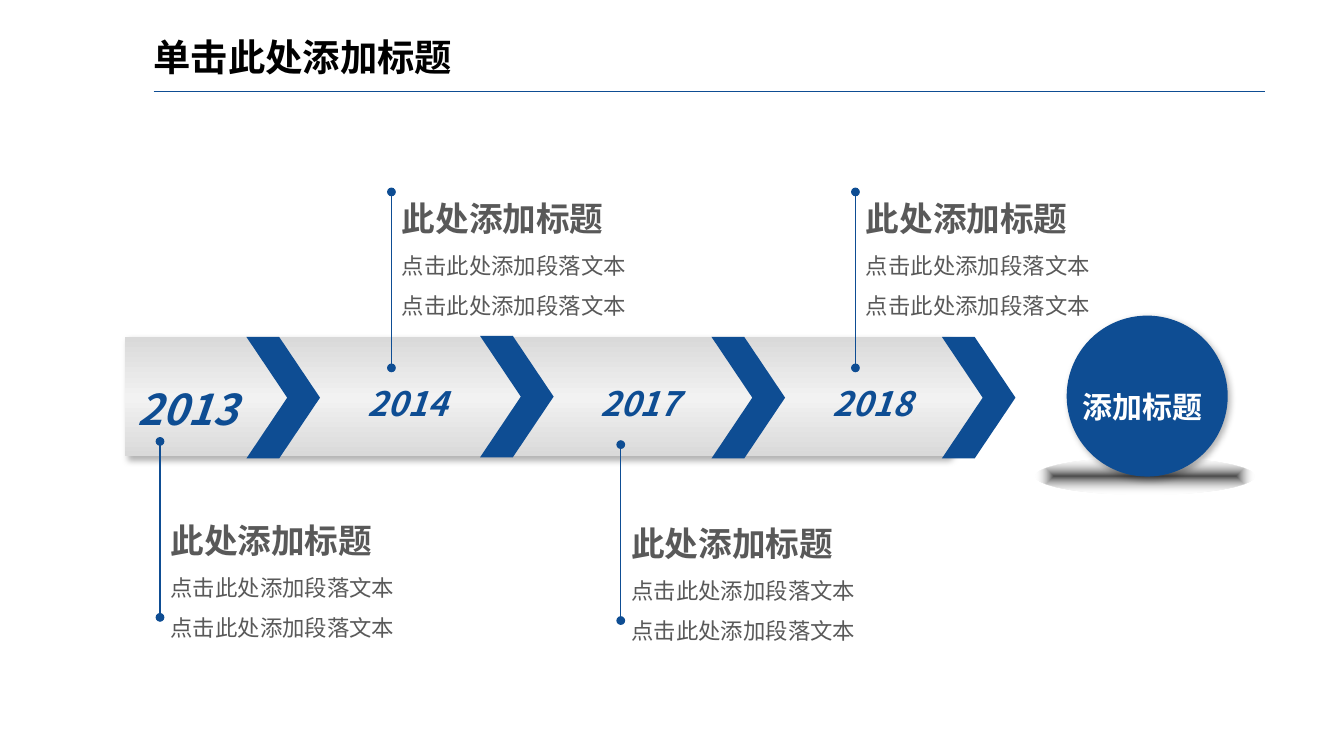
"""Build a four-year timeline slide with callouts and a closing circle."""
import dataclasses

import lxml.etree
import pptx
import pptx.dml.color
import pptx.enum.shapes
import pptx.enum.text
import pptx.oxml
import pptx.oxml.ns
import pptx.util

EMU_PER_PX = 9144
SHAPES = pptx.enum.shapes.MSO_SHAPE


@dataclasses.dataclass(frozen=True)
class Theme:
    font: str = "Noto Sans CJK SC"
    blue: str = "0E4D93"
    grey: str = "595959"
    black: str = "000000"
    white: str = "FFFFFF"
    band_edge: str = "D9D9D9"
    band_middle: str = "F2F2F2"
    title_size: float = 25.2
    first_year_size: float = 28.6
    heading_size: float = 22.7
    badge_size: float = 20.2
    body_size: float = 15.1
    line_width: float = 0.75


@dataclasses.dataclass(frozen=True)
class Milestone:
    year: str
    year_box: tuple
    year_size: float
    chevron_at: tuple
    stem_at: tuple
    callout_shift: int
    callout_width: int


THEME = Theme()
CALLOUT = ["此处添加标题", "点击此处添加段落文本", "点击此处添加段落文本"]
ABOVE, BELOW = -18, 50
STEM_LENGTH = 165
MILESTONES = [
    Milestone("2013", (119, 354, 119, 58), THEME.first_year_size, (231, 316), (150, 414), BELOW, 333),
    Milestone("2014", (335, 354, 99, 48), THEME.heading_size, (450, 315), (367, 180), ABOVE, 315),
    Milestone("2017", (553, 354, 99, 48), THEME.heading_size, (667, 316), (582, 417), BELOW, 291),
    Milestone("2018", (771, 354, 99, 48), THEME.heading_size, (883, 316), (802, 180), ABOVE, 300),
]


def px(length):
    """Turn a length in px into EMU."""
    return pptx.util.Emu(length * EMU_PER_PX)


def rgb(colour):
    """Turn a hex string into a colour."""
    return pptx.dml.color.RGBColor.from_string(colour)


def add_xml(parent, tag, **attributes):
    """Append a DrawingML element and return it."""
    return lxml.etree.SubElement(parent, pptx.oxml.ns.qn(tag), attributes)


def add_figure(slide, kind, box, colour=None, adjustment=None):
    """Add a borderless preset shape without a shadow."""
    figure = slide.shapes.add_shape(kind, *map(px, box))
    figure.shadow.inherit = False
    figure.line.fill.background()
    if colour:
        figure.fill.solid()
        figure.fill.fore_color.rgb = rgb(colour)
    if adjustment is not None:
        figure.adjustments[0] = adjustment
    return figure


def set_gradient(figure, stops, radial=False):
    """Fill a figure with (position, colour, opacity) stops given in percent."""
    figure.fill.background()
    properties = figure._element.spPr
    gradient = pptx.oxml.parse_xml(f'<a:gradFill {pptx.oxml.ns.nsdecls("a")} rotWithShape="1"/>')
    stop_list = add_xml(gradient, "a:gsLst")
    for position, colour, opacity in stops:
        stop = add_xml(stop_list, "a:gs", pos=str(position * 1000))
        shade = add_xml(stop, "a:srgbClr", val=colour)
        if opacity < 100:
            add_xml(shade, "a:alpha", val=str(opacity * 1000))
    if radial:
        route = add_xml(gradient, "a:path", path="shape")
        add_xml(route, "a:fillToRect", l="50000", t="50000", r="50000", b="50000")
    else:
        add_xml(gradient, "a:lin", ang="5400000", scaled="0")
    properties.replace(properties.find(pptx.oxml.ns.qn("a:noFill")), gradient)


def set_shadow(figure):
    """Give a figure a soft shadow to the lower right."""
    effects = figure._element.spPr.find(pptx.oxml.ns.qn("a:effectLst"))
    shadow = add_xml(effects, "a:outerShdw", blurRad=str(pptx.util.Pt(4.5)),
                     dist=str(pptx.util.Pt(2.6)), dir="3180000", algn="tl", rotWithShape="0")
    shade = add_xml(shadow, "a:srgbClr", val=THEME.black)
    add_xml(shade, "a:alpha", val="30000")


def add_rule(slide, start, end, dotted_ends=False):
    """Add a thin blue line, with round ends if wanted."""
    rule = slide.shapes.add_connector(
        pptx.enum.shapes.MSO_CONNECTOR.STRAIGHT, *map(px, start + end))
    rule.line.color.rgb = rgb(THEME.blue)
    rule.line.width = pptx.util.Pt(THEME.line_width)
    if dotted_ends:
        for end_tag in ("a:headEnd", "a:tailEnd"):
            add_xml(rule.line._get_or_add_ln(), end_tag, type="oval")
    add_xml(rule._element.spPr, "a:effectLst")


def add_text(slide, box, lines, sizes, colour, wrap=True, italic=False, spacing=None):
    """Add a text box whose first line is bold."""
    frame = slide.shapes.add_textbox(*map(px, box)).text_frame
    frame.text = "\n".join(lines)
    frame.word_wrap = wrap
    frame.auto_size = pptx.enum.text.MSO_AUTO_SIZE.SHAPE_TO_FIT_TEXT
    for index, (paragraph, size) in enumerate(zip(frame.paragraphs, sizes)):
        paragraph.line_spacing = spacing
        for run in paragraph.runs:
            run.font.size = pptx.util.Pt(size)
            run.font.bold = index == 0
            run.font.italic = italic
            run.font.color.rgb = rgb(colour)
            run.font.name = THEME.font
            add_xml(run.font._element, "a:ea", typeface=THEME.font)


def add_title(slide):
    """Add the slide title and the rule under it."""
    add_rule(slide, (144, 86), (1186, 86))
    add_text(slide, (134, 27, 1052, 53), ["单击此处添加标题"], [THEME.title_size], THEME.black)


def add_band(slide):
    """Add the grey arrow band behind the years."""
    band = add_figure(slide, SHAPES.PENTAGON, (117, 316, 815, 112), adjustment=0.4)
    set_gradient(band, [(0, THEME.band_edge, 100), (51, THEME.band_middle, 100),
                        (100, THEME.band_edge, 100)])
    set_shadow(band)


def add_badge(slide):
    """Add the closing circle, its floor shade and its label."""
    floor = add_figure(slide, SHAPES.OVAL, (971, 429, 205, 35))
    set_gradient(floor, [(0, THEME.black, 70), (100, THEME.white, 0)], radial=True)
    set_shadow(add_figure(slide, SHAPES.OVAL, (1000, 296, 151, 151), THEME.blue))
    add_text(slide, (1005, 343, 133, 61), ["添加标题"], [THEME.badge_size], THEME.white,
             wrap=False, spacing=1.5)


def add_milestone(slide, milestone):
    """Add one year with its chevron, stem and callout."""
    left, top = milestone.stem_at
    add_figure(slide, SHAPES.CHEVRON, milestone.chevron_at + (69, 114), THEME.blue, 0.555)
    add_text(slide, milestone.year_box, [milestone.year], [milestone.year_size], THEME.blue,
             wrap=False, italic=True)
    add_rule(slide, (left, top), (left, top + STEM_LENGTH), dotted_ends=True)
    add_text(slide, (left, top + milestone.callout_shift, milestone.callout_width, 144), CALLOUT,
             [THEME.heading_size, THEME.body_size, THEME.body_size], THEME.grey, spacing=1.5)


def main():
    """Build and save the slide."""
    deck = pptx.Presentation()
    deck.slide_width, deck.slide_height = px(1260), px(709)
    slide = deck.slides.add_slide(deck.slide_layouts[6])
    add_title(slide)
    add_band(slide)
    add_badge(slide)
    for milestone in MILESTONES:
        add_milestone(slide, milestone)
    deck.save("out.pptx")


if __name__ == "__main__":
    main()
